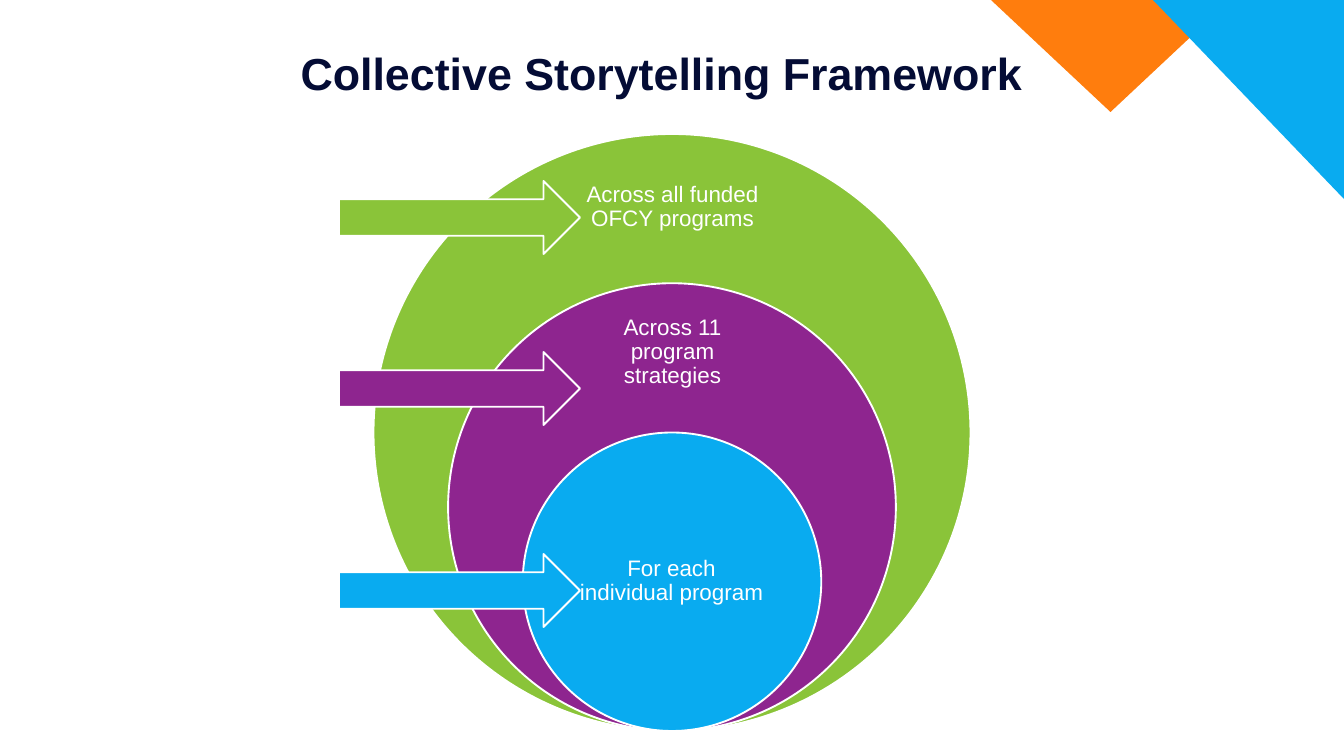
from pptx import Presentation
from pptx.dml.color import RGBColor
from pptx.enum.shapes import MSO_SHAPE
from pptx.enum.text import MSO_ANCHOR, MSO_AUTO_SIZE, PP_ALIGN
from pptx.util import Inches, Pt

TITLE = "Collective Storytelling Framework"
NAVY, WHITE, ORANGE, BLUE = "040C35", "FFFFFF", "FF7D0D", "09ABF0"

# label, colour, circle size in quarters, label box, arrow top
RINGS = [
    ("Across all funded OFCY programs", "8AC439", 4, (568, 163, 209, 89), 181),
    ("Across 11 program strategies", "8E258F", 3, (568, 310, 209, 84), 352),
    ("For each individual program", BLUE, 2, (566, 507, 211, 149), 554),
]
CORNER = [
    (MSO_SHAPE.ISOSCELES_TRIANGLE, ORANGE, (991, 0, 239, 112)),
    (MSO_SHAPE.RIGHT_TRIANGLE, BLUE, (1153, 0, 191, 199)),
]
MID, BASE, SIZE = 672, 731, 597  # shared centre, bottom and largest circle
ARROW_X, ARROW_W, ARROW_H = 339, 241, 73
PAD = 13


def px(n):
    return Inches(n / 67.2)


def rgb(code):
    return RGBColor.from_string(code)


def draw(kind, box, fill, line=None):
    shape = slide.shapes.add_shape(kind, *map(px, box))
    shape.shadow.inherit = False
    shape.fill.solid()
    shape.fill.fore_color.rgb = rgb(fill)
    if line:
        shape.line.color.rgb = rgb(line)
        shape.line.width = Pt(2)
    else:
        shape.line.fill.background()
    return shape


def write(frame, text, size, color, pad, anchor, bold=False):
    frame.word_wrap = True
    frame.auto_size = MSO_AUTO_SIZE.NONE
    frame.vertical_anchor = anchor
    frame.margin_left = frame.margin_right = px(pad)
    frame.margin_top = frame.margin_bottom = px(pad)
    para = frame.paragraphs[0]
    para.alignment = PP_ALIGN.CENTER
    run = para.add_run()
    run.text = text
    font = run.font
    font.name, font.size, font.bold = "Arial", Pt(size), bold
    font.color.rgb = rgb(color)
    return para


deck = Presentation()
deck.slide_width, deck.slide_height = Inches(20), Inches(11.25)
slide = deck.slides.add_slide(deck.slide_layouts[5])

title = slide.shapes.title
title.left, title.top, title.width, title.height = map(px, (179, 46, 965, 144))
write(title.text_frame, TITLE, 48, NAVY, 0, MSO_ANCHOR.TOP, bold=True)

for label, color, parts, box, top in RINGS:
    side = SIZE * parts / 4
    draw(MSO_SHAPE.OVAL, (MID - side / 2, BASE - side, side, side), color, WHITE)
    text = slide.shapes.add_textbox(*map(px, box))
    para = write(text.text_frame, label, 24, WHITE, PAD, MSO_ANCHOR.MIDDLE)
    para.line_spacing = 0.9

for label, color, parts, box, top in RINGS:
    draw(MSO_SHAPE.RIGHT_ARROW, (ARROW_X, top, ARROW_W, ARROW_H), color, WHITE)

for kind, color, box in CORNER:
    draw(kind, box, color).rotation = 180

deck.save("out.pptx")
